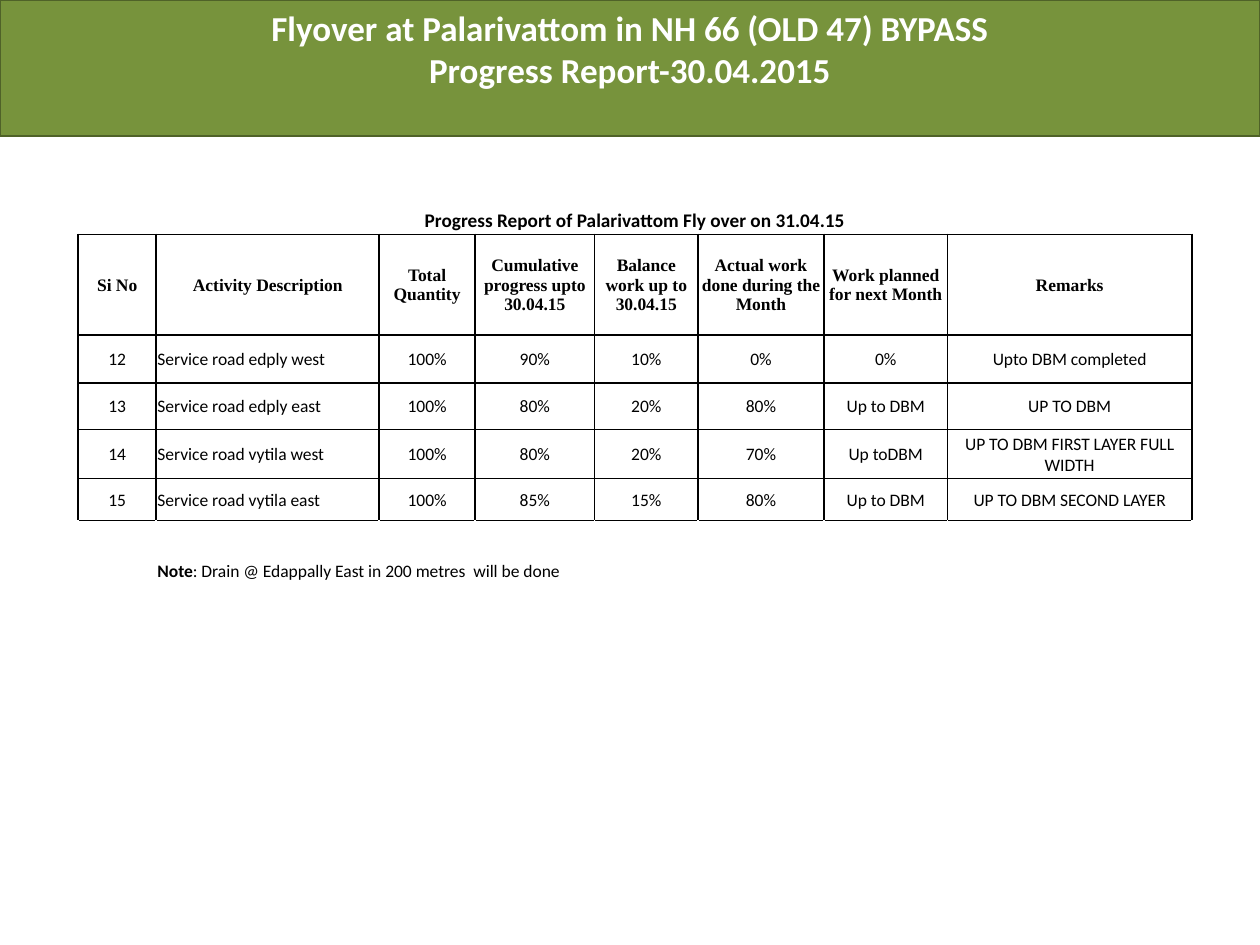
from lxml import etree
from pptx import Presentation, util as u
from pptx.dml.color import RGBColor
from pptx.enum import text
from pptx.oxml.ns import qn

GREEN = RGBColor(0x77, 0x93, 0x3C)
DARK_GREEN = RGBColor(0x4F, 0x62, 0x28)
WHITE = RGBColor(0xFF, 0xFF, 0xFF)
BLACK = RGBColor(0, 0, 0)

COLS = [0.62, 1.77, 0.76, 0.95, 0.82, 1, 0.98, 1.94]
ROWS = [0.22, 0.8, 0.38, 0.37, 0.39, 0.33, 0.3, 0.19]
CAPTION, HEADER, LAST_ITEM, NOTE = 0, 1, 5, 7

ROW_TEXTS = [
    ["Progress Report of Palarivattom Fly over on 31.04.15"],
    ["Si No", "Activity Description", "Total Quantity",
     "Cumulative progress upto 30.04.15", "Balance work up to 30.04.15",
     "Actual work done during the Month", "Work planned for next Month", "Remarks"],
    ["12", "Service road edply west", "100%", "90%", "10%", "0%", "0%",
     "Upto DBM completed"],
    ["13", "Service road edply east", "100%", "80%", "20%", "80%", "Up to DBM",
     "UP TO DBM"],
    ["14", "Service road vytila west", "100%", "80%", "20%", "70%", "Up toDBM",
     "UP TO DBM FIRST LAYER FULL WIDTH"],
    ["15", "Service road vytila east", "100%", "85%", "15%", "80%", "Up to DBM",
     "UP TO DBM SECOND LAYER"],
    [],
    ["", "Note"],
]


def style_run(r, size, bold, color=BLACK, name="Calibri"):
    r.font.size, r.font.bold, r.font.name = u.Pt(size), bold, name
    r.font.color.rgb = color


def add_border(cell, side):
    ln = etree.SubElement(cell._tc.get_or_add_tcPr(), qn("a:" + side), w=str(u.Pt(1)))
    fill = etree.SubElement(ln, qn("a:solidFill"))
    etree.SubElement(fill, qn("a:srgbClr"), val=str(BLACK))


prs = Presentation()
prs.slide_width, prs.slide_height = u.Inches(10), u.Inches(7.5)
s = prs.slides.add_slide(prs.slide_layouts[1])
title = s.shapes.title
title.element.getparent().remove(title.element)

# Heading band
sp = s.placeholders[1]
sp.left, sp.top, sp.width, sp.height = 0, 0, prs.slide_width, u.Inches(1.08)
sp.fill.solid()
sp.fill.fore_color.rgb = GREEN
sp.line.color.rgb = DARK_GREEN
sp.line.width = u.Pt(0.75)
tf = sp.text_frame
tf.text = "Flyover at Palarivattom in NH 66 (OLD 47) BYPASS\nProgress Report-30.04.2015"
tf.auto_size = text.MSO_AUTO_SIZE.NONE
tf.vertical_anchor = text.MSO_ANCHOR.TOP
for p in tf.paragraphs:
    p.alignment = text.PP_ALIGN.CENTER
    p.space_before = u.Pt(0)
    etree.SubElement(p._p.get_or_add_pPr(), qn("a:buNone"))
    style_run(p.runs[0], 20, True, WHITE)

# Progress table
table = s.shapes.add_table(len(ROWS), len(COLS), u.Inches(0.62), u.Inches(1.64),
                           u.Inches(sum(COLS)), u.Inches(sum(ROWS))).table
table.first_row = table.horz_banding = False
for column, width in zip(table.columns, COLS):
    column.width = u.Inches(width)
for row, height in zip(table.rows, ROWS):
    row.height = u.Inches(height)
table.cell(CAPTION, 0).merge(table.cell(CAPTION, 7))
table.cell(NOTE, 1).merge(table.cell(NOTE, 7))

for i, texts in enumerate(ROW_TEXTS):
    for j in range(len(COLS)):
        cell = table.cell(i, j)
        cell.margin_left = cell.margin_right = cell.margin_top = u.Inches(0.01)
        cell.margin_bottom = 0
        cell.vertical_anchor = text.MSO_ANCHOR.BOTTOM if i == NOTE else text.MSO_ANCHOR.MIDDLE

        # Borders come before the fill
        if HEADER <= i <= LAST_ITEM:
            for side in ("lnL", "lnR", "lnT", "lnB"):
                add_border(cell, side)
        elif i == CAPTION:
            add_border(cell, "lnB")
        elif i == LAST_ITEM + 1:
            add_border(cell, "lnT")
        if i > HEADER:
            cell.fill.solid()
            cell.fill.fore_color.rgb = WHITE
        else:
            cell.fill.background()

        p = cell.text_frame.paragraphs[0]
        if j >= len(texts) or not texts[j]:
            etree.SubElement(p._p, qn("a:endParaRPr"), sz="1000")
            continue
        p.text = texts[j]
        left = j == 1 and i > HEADER
        p.alignment = text.PP_ALIGN.LEFT if left else text.PP_ALIGN.CENTER
        style_run(p.runs[0], 11 if i == CAPTION else 10, i in (CAPTION, HEADER, NOTE),
                  name="Times New Roman" if i == HEADER else "Calibri")

# Rest of the note after its bold label
r = table.cell(NOTE, 1).text_frame.paragraphs[0].add_run()
r.text = ": Drain @ Edappally East in 200 metres  will be done"
style_run(r, 10, False)

prs.save("out.pptx")
